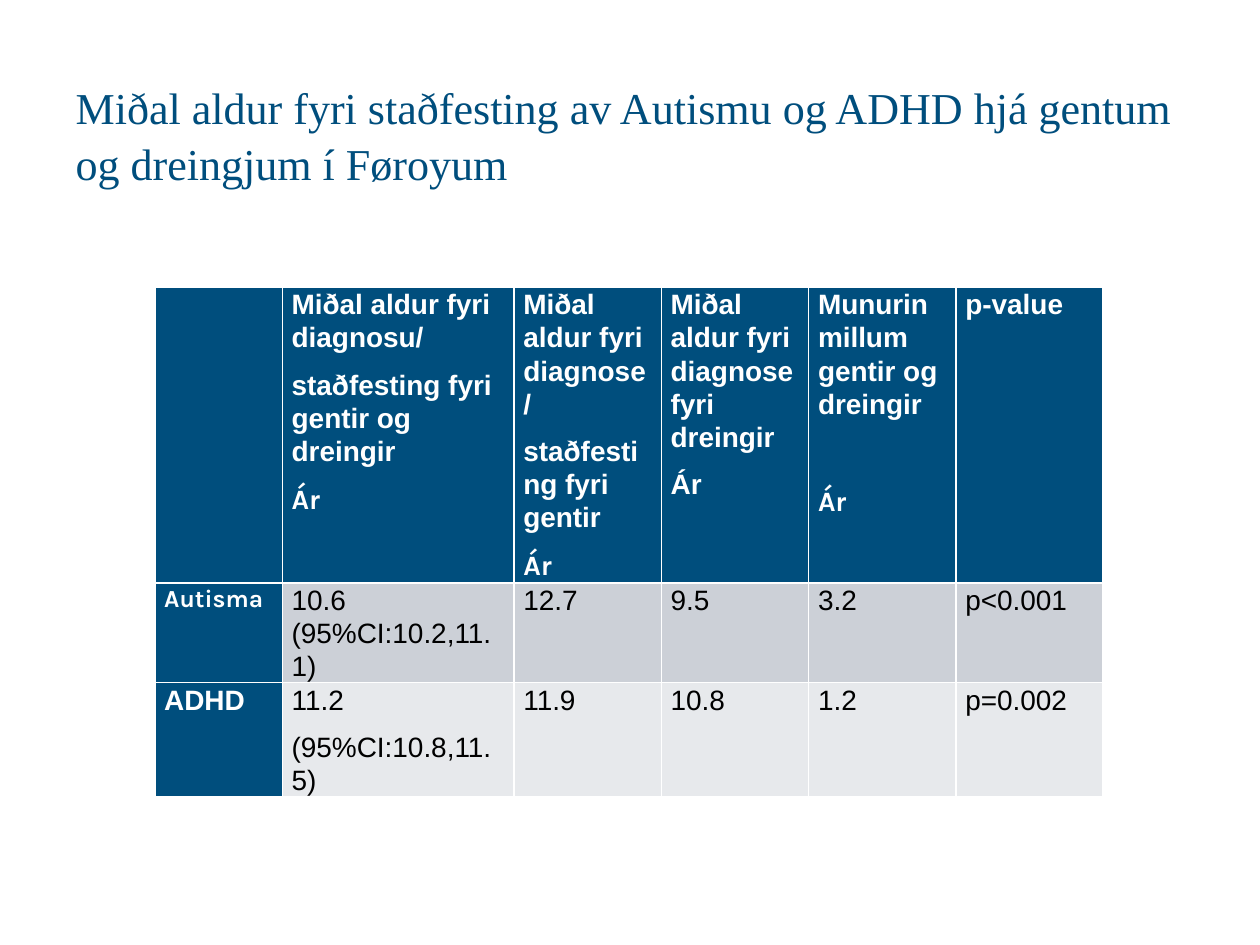
from pptx import Presentation
from pptx.dml.color import RGBColor
from pptx.enum.text import MSO_ANCHOR, MSO_AUTO_SIZE, PP_ALIGN
from pptx.util import Cm, Pt

NAVY = RGBColor(0x00, 0x4E, 0x7D)
WHITE = RGBColor(0xFF, 0xFF, 0xFF)
BLACK = RGBColor(0x00, 0x00, 0x00)
BAND_DARK = RGBColor(0xCC, 0xD0, 0xD7)
BAND_LIGHT = RGBColor(0xE7, 0xE9, 0xEC)

COLUMN_WIDTHS = [2.57, 4.67, 2.97, 2.97, 2.97, 2.97]
ROW_HEIGHTS = [3.45, 1.17, 1.68]
ROW_FILLS = [NAVY, BAND_DARK, BAND_LIGHT]

# Each cell is a list of paragraphs
ROWS = [
    [
        [],
        ["Miðal aldur fyri diagnosu/", "staðfesting fyri gentir og dreingir", "Ár"],
        ["Miðal aldur fyri diagnose/", "staðfesting fyri gentir", "Ár"],
        ["Miðal aldur fyri diagnose fyri dreingir", "Ár"],
        ["Munurin millum gentir og dreingir", "Ár"],
        ["p-value"],
    ],
    [["Autisma"], ["10.6 (95%CI:10.2,11.1)"], ["12.7"], ["9.5"], ["3.2"], ["p<0.001"]],
    [["ADHD"], ["11.2", "(95%CI:10.8,11.5)"], ["11.9"], ["10.8"], ["1.2"], ["p=0.002"]],
]
BOYS_COLUMN, DIFFERENCE_COLUMN = 3, 4

prs = Presentation()
prs.slide_width, prs.slide_height = Cm(25.4), Cm(19.05)
slide = prs.slides.add_slide(prs.slide_layouts[5])

title = slide.shapes.title
title.left, title.top, title.width, title.height = Cm(1.27), Cm(1.45), Cm(22.86), Cm(2.49)
title_frame = title.text_frame
title_frame.text = "Miðal aldur fyri staðfesting av Autismu og ADHD hjá gentum og dreingjum í Føroyum"
title_frame.word_wrap = True
title_frame.auto_size = MSO_AUTO_SIZE.NONE
title_frame.vertical_anchor = MSO_ANCHOR.MIDDLE
heading = title_frame.paragraphs[0]
heading.alignment = PP_ALIGN.LEFT
heading.line_spacing = 1.05
heading.font.name = "Times New Roman"
heading.font.size = Pt(25.2)
heading.font.color.rgb = NAVY

age_frame = slide.shapes.add_table(
    len(ROWS), len(COLUMN_WIDTHS), Cm(3.12), Cm(5.79), Cm(19.12), Cm(8.03)
)
age_table = age_frame.table
age_table.first_col = True
for column, width in zip(age_table.columns, COLUMN_WIDTHS):
    column.width = Cm(width)
for row, height in zip(age_table.rows, ROW_HEIGHTS):
    row.height = Cm(height)
age_frame.height = Cm(8.03)

for r, row_texts in enumerate(ROWS):
    for c, texts in enumerate(row_texts):
        is_heading = r == 0 or c == 0
        cell = age_table.cell(r, c)
        cell.fill.solid()
        cell.fill.fore_color.rgb = NAVY if is_heading else ROW_FILLS[r]
        cell.margin_left = cell.margin_right = Cm(0.19)
        cell.margin_top = cell.margin_bottom = Cm(0)
        cell.text_frame.text = "\n".join(texts)
        for paragraph, text in zip(cell.text_frame.paragraphs, texts):
            paragraph.line_spacing = 1.07
            paragraph.space_after = Pt(8)
            if text == "Ár" and c == DIFFERENCE_COLUMN:
                paragraph.space_before = Pt(28.5)
            in_karla = text == "Autisma" or (text == "Ár" and c != BOYS_COLUMN)
            for run in paragraph.runs:
                run.font.name = "Karla" if in_karla else "Arial"
                run.font.size = Pt(14 if text == "Autisma" else 16)
                run.font.bold = is_heading
                run.font.color.rgb = WHITE if is_heading else BLACK

prs.save("out.pptx")
